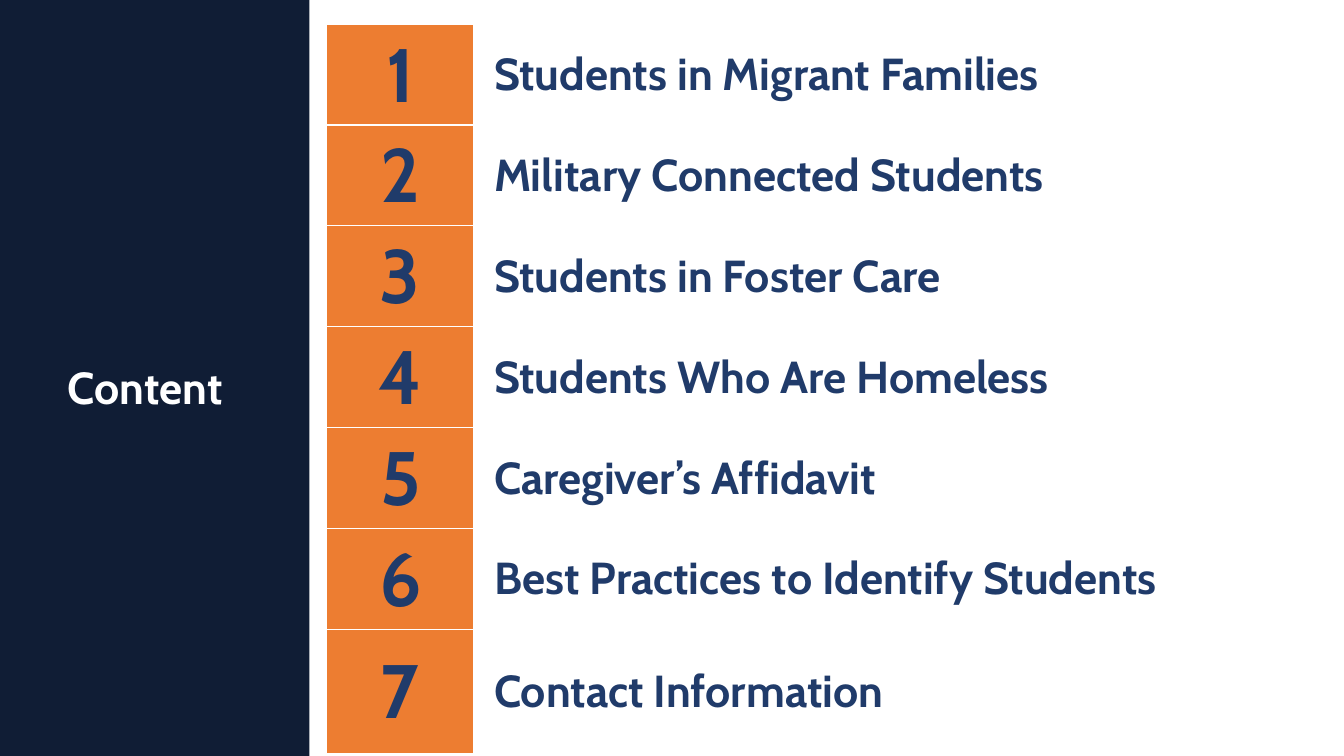
import pptx
import pptx.util
import pptx.dml.color
import pptx.enum.shapes
import pptx.enum.text
from pptx.util import Inches

NAVY = "101D35"
BLUE = "203B6A"
ORANGE = "ED7D31"
WHITE = "FFFFFF"


def color(value):
    return pptx.dml.color.RGBColor.from_string(value)


def add_text(para, text, size, value, align):
    para.alignment = align
    span = para.add_run()
    span.text = text
    span.font.name = "Cabin"
    span.font.size = pptx.util.Pt(size)
    span.font.bold = True
    span.font.color.rgb = color(value)


left = pptx.enum.text.PP_ALIGN.LEFT
center = pptx.enum.text.PP_ALIGN.CENTER
middle = pptx.enum.text.MSO_ANCHOR.MIDDLE

deck = pptx.Presentation()
deck.slide_width = Inches(13.33)
deck.slide_height = Inches(7.5)
page = deck.slides.add_slide(deck.slide_layouts[5])

panel = page.shapes.add_shape(
    pptx.enum.shapes.MSO_SHAPE.RECTANGLE, 0, 0, Inches(3.07), Inches(7.5)
)
panel.shadow.inherit = False
panel.fill.solid()
panel.fill.fore_color.rgb = color(NAVY)
panel.line.fill.background()
page.shapes._spTree.insert(2, panel._element)

title = page.shapes.title
title.left, title.top = Inches(0.57), Inches(3.52)
title.width, title.height = Inches(1.94), Inches(0.64)
title.text_frame.auto_size = pptx.enum.text.MSO_AUTO_SIZE.SHAPE_TO_FIT_TEXT
title.text_frame.vertical_anchor = middle
add_text(title.text_frame.paragraphs[0], "Content", 32, WHITE, left)

topics = [
    "Students in Migrant Families",
    "Military Connected Students",
    "Students in Foster Care",
    "Students Who Are Homeless",
    "Caregiver’s Affidavit",
    "Best Practices to Identify Students",
    "Contact Information",
]
frame = page.shapes.add_table(
    len(topics), 2, Inches(3.24), Inches(0.24), Inches(10.06), Inches(7.23)
)
contents = frame.table
contents.horz_banding = False
contents.columns[0].width = Inches(1.46)
contents.columns[1].width = Inches(8.6)

for index, topic in enumerate(topics):
    contents.rows[index].height = Inches(1)
    number_cell = contents.cell(index, 0)
    number_cell.vertical_anchor = middle
    number_cell.fill.solid()
    number_cell.fill.fore_color.rgb = color(ORANGE)
    add_text(number_cell.text_frame.paragraphs[0], str(index + 1), 54, BLUE, center)

    topic_cell = contents.cell(index, 1)
    topic_cell.vertical_anchor = middle
    topic_cell.margin_left = Inches(0.2)
    topic_cell.fill.background()
    add_text(topic_cell.text_frame.paragraphs[0], topic, 32, BLUE, left)

contents.rows[len(topics) - 1].height = Inches(1.23)

deck.save("out.pptx")
